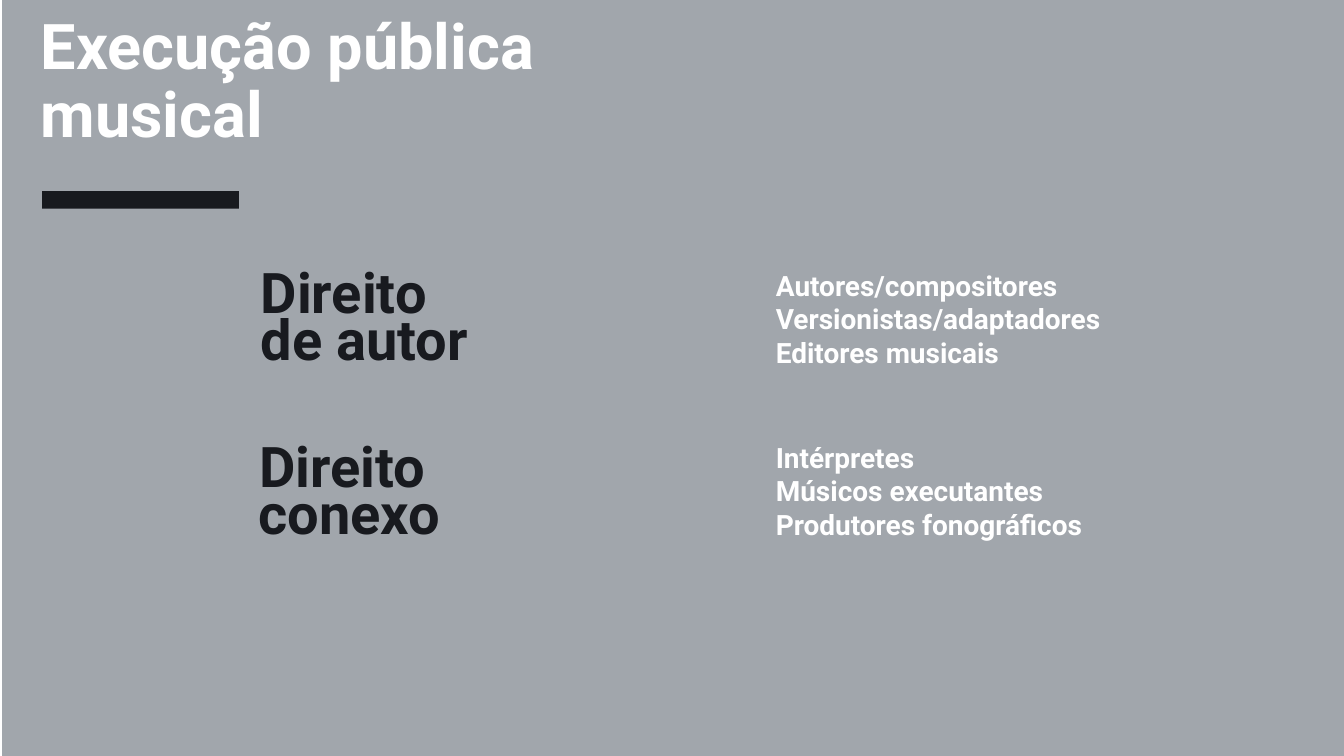
from pptx import Presentation
from pptx.dml.color import RGBColor
from pptx.enum.shapes import MSO_SHAPE
from pptx.enum.text import MSO_ANCHOR, MSO_AUTO_SIZE, PP_ALIGN
from pptx.util import Pt

RECTANGLE = MSO_SHAPE.RECTANGLE
TOP, MIDDLE = MSO_ANCHOR.TOP, MSO_ANCHOR.MIDDLE
LEFT, CENTER = PP_ALIGN.LEFT, PP_ALIGN.CENTER
GROW = MSO_AUTO_SIZE.SHAPE_TO_FIT_TEXT
FONT = "Roboto"
COLORS = {"ground": "A1A6AC", "dark": "181A1F", "light": "FFFFFF"}

RIGHTS = [
    {
        "heading": ["Direito", "de autor"],
        "heading_box": (366.5, 386, 450.7, 150.5),
        "align": LEFT,
        "holders": ["Autores/compositores", "Versionistas/adaptadores", "Editores musicais"],
        "holders_box": (1102.3, 374.4, 526.3, 161.3),
    },
    {
        "heading": ["Direito ", "conexo"],
        "heading_box": (110.9, 635, 776.2, 150.5),
        "align": CENTER,
        "holders": ["Intérpretes", "Músicos executantes", "Produtores fonográficos"],
        "holders_box": (1102.3, 620, 542.2, 161.3),
    },
]


def add_block(slide, box, color):
    """Draw a plain filled rectangle in the given box."""
    shape = slide.shapes.add_shape(RECTANGLE, *map(Pt, box))
    shape.shadow.inherit = False
    shape.fill.solid()
    shape.fill.fore_color.rgb = RGBColor.from_string(COLORS[color])
    shape.line.fill.background()


def add_text(slide, box, lines, size, color, spacing=1.0, align=LEFT, anchor=MIDDLE, inset=6):
    """Write bold lines, one paragraph each, in the given box."""
    frame = slide.shapes.add_textbox(*map(Pt, box)).text_frame
    frame.word_wrap = True
    frame.auto_size = GROW
    frame.vertical_anchor = anchor
    frame.margin_left = frame.margin_right = Pt(inset)
    frame.margin_top = frame.margin_bottom = Pt(inset)
    for index, line in enumerate(lines):
        paragraph = frame.add_paragraph() if index else frame.paragraphs[0]
        paragraph.alignment = align
        paragraph.line_spacing = spacing
        run = paragraph.add_run()
        run.text = line
        run.font.name = FONT
        run.font.size = Pt(size)
        run.font.bold = True
        run.font.color.rgb = RGBColor.from_string(COLORS[color])


def add_title(slide, box):
    """Write the slide title with the dark bar below it."""
    left, top, width, height = box
    add_text(slide, box, ["Execução pública musical"], 90, "light",
             spacing=0.9, anchor=TOP, inset=5)
    add_block(slide, (left + 7, top + height + 49, 281, 25), "dark")


def add_right(slide, right):
    """Place the name of a right beside the list of its holders."""
    add_text(slide, right["heading_box"], right["heading"], 80, "dark",
             spacing=0.7, align=right["align"])
    add_text(slide, right["holders_box"], right["holders"], 40, "light")


def main():
    """Build the slide and save it."""
    presentation = Presentation()
    presentation.slide_width = Pt(1920)
    presentation.slide_height = Pt(1080)
    slide = presentation.slides.add_slide(presentation.slide_layouts[6])
    add_block(slide, (3, -38, 1987, 1118), "ground")
    add_title(slide, (53.3, 16.6, 850.3, 207.4))
    for right in RIGHTS:
        add_right(slide, right)
    presentation.save("out.pptx")


if __name__ == "__main__":
    main()
